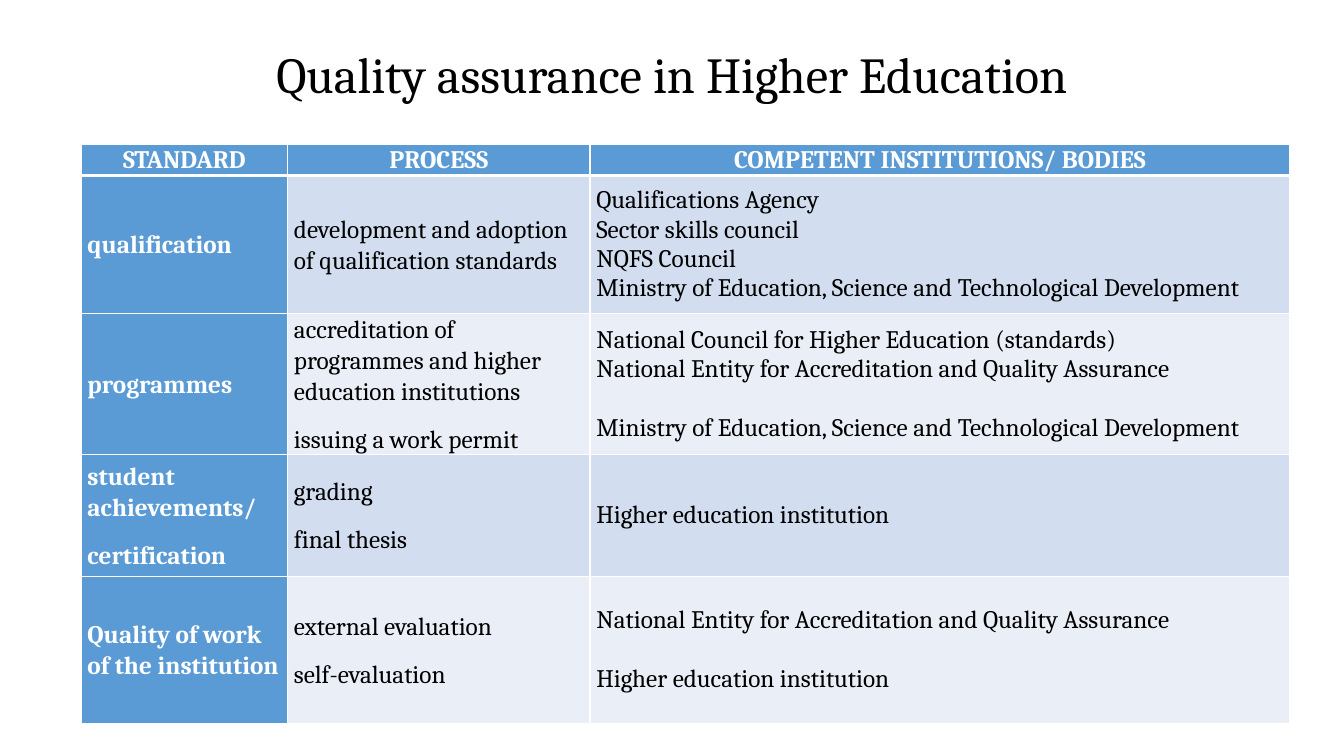
from lxml import etree
from pptx import Presentation
from pptx.dml.color import RGBColor
from pptx.enum.text import MSO_ANCHOR, PP_ALIGN
from pptx.oxml.ns import qn
from pptx.util import Pt

MIDDLE = MSO_ANCHOR.MIDDLE
CENTER, LEFT, JUSTIFY = PP_ALIGN.CENTER, PP_ALIGN.LEFT, PP_ALIGN.JUSTIFY

COLORS = {"text": "000000", "white": "FFFFFF", "accent": "5B9BD5",
          "band_dark": "D2DEEF", "band_light": "EAEFF7"}
FONT = "Cambria"
GROUP_GAP = 21
COL_WIDTHS = [147.5, 216, 500]
ROW_HEIGHTS = [22.3, 98.6, 87, 87, 105]

MINISTRY = "Ministry of Education, Science and Technological Development"
ENTITY = "National Entity for Accreditation and Quality Assurance"
INSTITUTION = "Higher education institution"

HEADERS = ["STANDARD", "PROCESS", "COMPETENT INSTITUTIONS/ BODIES"]
ROWS = [
    (["qualification"],
     ["development and adoption of qualification standards"],
     [["Qualifications Agency", "Sector skills council", "NQFS Council", MINISTRY]]),
    (["programmes"],
     ["accreditation of programmes and higher education institutions",
      "issuing a work permit"],
     [["National Council for Higher Education (standards)", ENTITY], [MINISTRY]]),
    (["student achievements/", "certification"],
     ["grading", "final thesis"],
     [[INSTITUTION]]),
    (["Quality of work of the institution"],
     ["external evaluation", "self-evaluation"],
     [[ENTITY], [INSTITUTION]]),
]


def rgb(name):
    """Return the named palette colour."""
    return RGBColor.from_string(COLORS[name])


def set_font(p, size, color, bold=False):
    """Format the font of a whole paragraph."""
    p.font.name, p.font.size, p.font.bold = FONT, Pt(size), bold
    p.font.color.rgb = rgb(color)


def set_borders(cell, top, bottom):
    """Draw white borders around a cell."""
    tc_pr = cell._tc.get_or_add_tcPr()
    for side, width in (("L", 1), ("R", 1), ("T", top), ("B", bottom)):
        ln = etree.SubElement(tc_pr, qn(f"a:ln{side}"), w=str(Pt(width)))
        fill = etree.SubElement(ln, qn("a:solidFill"))
        etree.SubElement(fill, qn("a:srgbClr"), val=COLORS["white"])


def fill_cell(cell, lines, fill, color, bold, align, spacing):
    """Fill a cell with (text, space before, space after) lines."""
    cell.margin_left = cell.margin_right = Pt(4.5)
    cell.margin_top = cell.margin_bottom = 0
    cell.vertical_anchor = MIDDLE
    cell.fill.solid()
    cell.fill.fore_color.rgb = rgb(fill)
    tf = cell.text_frame
    for i, (text, before, after) in enumerate(lines):
        p = tf.add_paragraph() if i else tf.paragraphs[0]
        p.text = text
        p.alignment, p.line_spacing = align, spacing
        p.space_before, p.space_after = Pt(before), Pt(after)
        set_font(p, 18, color, bold)


def spaced_lines(texts):
    """Lay out separate paragraphs with even gaps."""
    return [(text, 6 if i else 0, 6) for i, text in enumerate(texts)]


def grouped_lines(groups):
    """Lay out tight groups of lines with a one-line gap between them."""
    return [(text, GROUP_GAP if g and not i else 0, 0)
            for g, group in enumerate(groups) for i, text in enumerate(group)]


def add_title(s, x, y, w, h):
    """Place the slide title."""
    sp = s.shapes.title
    sp.left, sp.top, sp.width, sp.height = Pt(x), Pt(y), Pt(w), Pt(h)
    tf = sp.text_frame
    tf.text = "Quality assurance in Higher Education"
    tf.vertical_anchor = MIDDLE
    p = tf.paragraphs[0]
    p.alignment, p.line_spacing = CENTER, 0.9
    set_font(p, 36, "text")


def add_standards_table(s, x, y):
    """Place the table of standards, processes and bodies."""
    table = s.shapes.add_table(len(ROW_HEIGHTS), len(COL_WIDTHS), Pt(x), Pt(y),
                               Pt(sum(COL_WIDTHS)), Pt(sum(ROW_HEIGHTS))).table
    for col, width in zip(table.columns, COL_WIDTHS):
        col.width = Pt(width)
    for r, (row, height) in enumerate(zip(table.rows, ROW_HEIGHTS)):
        row.height = Pt(height)
        for cell in row.cells:
            set_borders(cell, 3 if r == 1 else 1, 1 if r else 3)
    for c, text in enumerate(HEADERS):
        fill_cell(table.cell(0, c), [(text, 0, 0)], "accent", "white", True, CENTER, 1.07)
    for r, (standard, process, bodies) in enumerate(ROWS, 1):
        band = "band_dark" if r % 2 else "band_light"
        fill_cell(table.cell(r, 0), spaced_lines(standard), "accent", "white", True, LEFT, 1.07)
        fill_cell(table.cell(r, 1), spaced_lines(process), band, "text", False, LEFT, 1.07)
        fill_cell(table.cell(r, 2), grouped_lines(bodies), band, "text", False, JUSTIFY, 1.0)


def main():
    """Build and save the slide."""
    prs = Presentation()
    prs.slide_width, prs.slide_height = Pt(960), Pt(540)
    s = prs.slides.add_slide(prs.slide_layouts[5])
    add_title(s, 66, 29, 828, 52.5)
    add_standards_table(s, 58, 103)
    prs.save("out.pptx")


if __name__ == "__main__":
    main()
